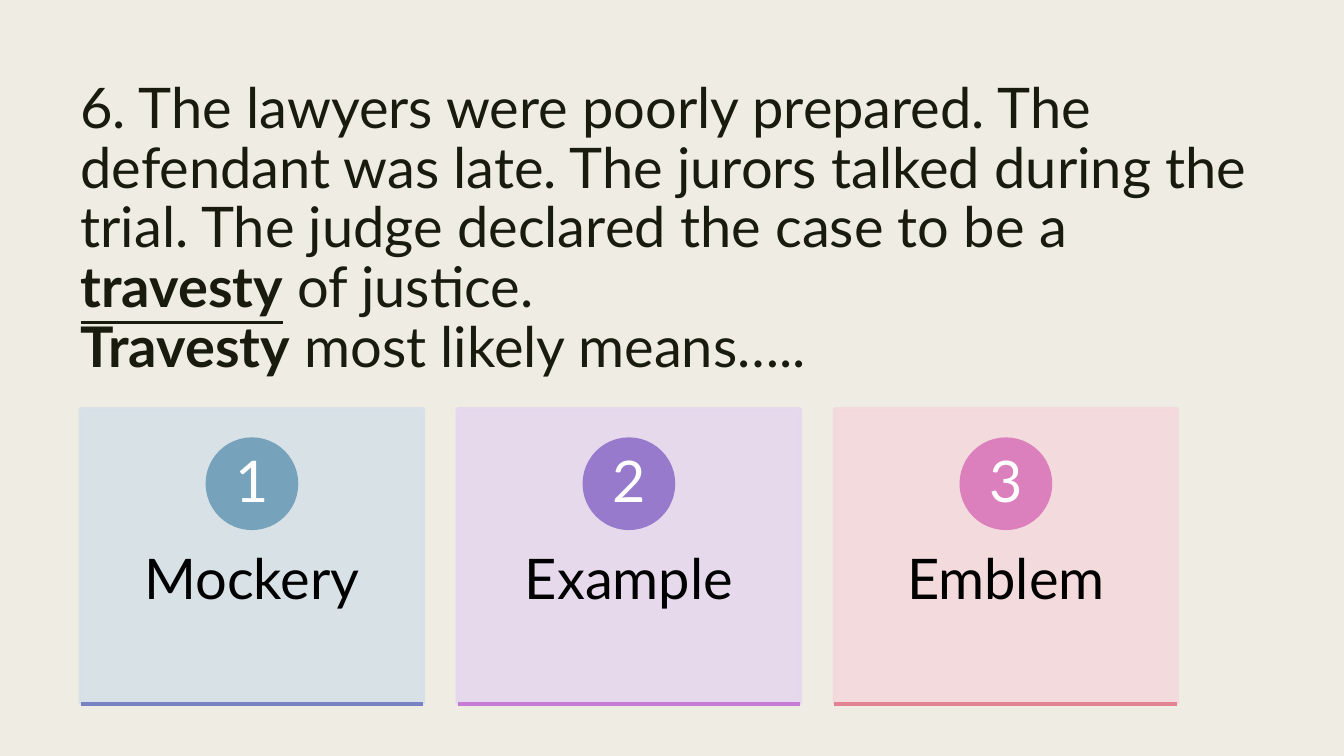
from dataclasses import dataclass

from lxml import etree
from pptx import Presentation
from pptx.dml.color import RGBColor
from pptx.enum.shapes import MSO_CONNECTOR, MSO_SHAPE
from pptx.enum.text import MSO_ANCHOR, PP_ALIGN
from pptx.oxml.ns import qn
from pptx.util import Cm, Pt

RECTANGLE, OVAL = MSO_SHAPE.RECTANGLE, MSO_SHAPE.OVAL
STRAIGHT = MSO_CONNECTOR.STRAIGHT
TOP, MIDDLE = MSO_ANCHOR.TOP, MSO_ANCHOR.MIDDLE
LEFT, CENTER = PP_ALIGN.LEFT, PP_ALIGN.CENTER

# Content: question runs as (text, bold, underlined)
QUESTION = [
    ("6. The lawyers were poorly prepared. The defendant was late. "
     "The jurors talked during the trial. "
     "The judge declared the case to be a ", False, False),
    ("travesty", True, True),
    (" of justice.\v", False, False),
    ("Travesty", True, False),
    (" most likely means…..", False, False),
]
# Answers: word, card colour, badge colour, base line colour
ANSWERS = [
    ("Mockery", "D6E0E7", "77A2BB", "7883C4"),
    ("Example", "E6D7EE", "977ACC", "C67CD4"),
    ("Emblem", "F4D9DC", "DB7FBD", "E28394"),
]


@dataclass(frozen=True)
class Theme:
    font: str = "Lato"
    background: str = "EFEDE3"
    question: str = "191B0E"
    answer: str = "000000"
    number: str = "FFFFFF"
    text_size: float = 40
    number_size: float = 41
    line_width: float = 2.75
    card_opacity: int = 90


THEME = Theme()

# Layout in centimetres
CARD_LEFT, CARD_TOP, CARD_WIDTH, CARD_HEIGHT = 2.03, 10.31, 8.64, 7.42
CARD_PITCH = 9.5
BADGE_SIZE, BADGE_DROP = 2.24, 0.76
NUMBER_SIZE = 1.58
LABEL_DROP, LABEL_HEIGHT = 2.82, 4.45


def color(value):
    return RGBColor.from_string(value)


def set_opacity(color_format_fill, percent):
    for element in color_format_fill.iter(qn("a:srgbClr")):
        etree.SubElement(element, qn("a:alpha"), val=str(percent * 1000))


def add_filled(slide, kind, box, fill):
    shape = slide.shapes.add_shape(kind, *map(Cm, box))
    shape.shadow.inherit = False
    shape.fill.solid()
    shape.fill.fore_color.rgb = color(fill)
    shape.line.color.rgb = color(fill)
    shape.line.width = Pt(THEME.line_width)
    return shape


def add_text(slide, box, runs, size, ink, align=CENTER, anchor=TOP,
             margins=(0.25, 0.13), spacing=0.9):
    frame = slide.shapes.add_textbox(*map(Cm, box)).text_frame
    frame.word_wrap = True
    frame.vertical_anchor = anchor
    frame.margin_left = frame.margin_right = Cm(margins[0])
    frame.margin_top = frame.margin_bottom = Cm(margins[1])
    paragraph = frame.paragraphs[0]
    paragraph.alignment = align
    paragraph.line_spacing = spacing
    paragraph.font.name = THEME.font
    paragraph.font.size = Pt(size)
    paragraph.font.color.rgb = color(ink)
    for text, bold, underlined in runs:
        before, line_break, after = text.partition("\v")
        run = paragraph.add_run()
        run.text = before
        run.font.bold = bold
        run.font.underline = underlined
        if line_break:
            paragraph.add_line_break()


def add_base_line(slide, left, top, width, ink):
    line = slide.shapes.add_connector(
        STRAIGHT, Cm(left), Cm(top), Cm(left + width), Cm(top))
    line.line.color.rgb = color(ink)
    line.line.width = Pt(THEME.line_width)
    etree.SubElement(line._element.spPr, qn("a:effectLst"))


def add_answer(slide, index, word, card_color, badge_color, base_color):
    left = CARD_LEFT + index * CARD_PITCH
    card = add_filled(slide, RECTANGLE,
                      (left, CARD_TOP, CARD_WIDTH, CARD_HEIGHT), card_color)
    set_opacity(card._element.spPr, THEME.card_opacity)
    add_text(slide, (left, CARD_TOP + LABEL_DROP, CARD_WIDTH, LABEL_HEIGHT),
             [(word, False, False)], THEME.text_size, THEME.answer,
             margins=(0.69, 0.91))

    # Numbered badge, centred across the card
    badge_left = left + (CARD_WIDTH - BADGE_SIZE) / 2
    badge_top = CARD_TOP + BADGE_DROP
    add_filled(slide, OVAL,
               (badge_left, badge_top, BADGE_SIZE, BADGE_SIZE), badge_color)
    inset = (BADGE_SIZE - NUMBER_SIZE) / 2
    add_text(slide, (badge_left + inset, badge_top + inset,
                     NUMBER_SIZE, NUMBER_SIZE),
             [(str(index + 1), False, False)], THEME.number_size,
             THEME.number, anchor=MIDDLE, margins=(0.18, 0.03))

    add_base_line(slide, left, CARD_TOP + CARD_HEIGHT, CARD_WIDTH, base_color)


def main():
    presentation = Presentation()
    presentation.slide_width, presentation.slide_height = Cm(33.87), Cm(19.05)
    slide = presentation.slides.add_slide(presentation.slide_layouts[6])
    slide.background.fill.solid()
    slide.background.fill.fore_color.rgb = color(THEME.background)

    # Question
    add_text(slide, (1.78, 1.9, 30.3, 4.11), QUESTION, THEME.text_size,
             THEME.question, align=LEFT, spacing=0.89)

    # Answer cards
    for index, answer in enumerate(ANSWERS):
        add_answer(slide, index, *answer)

    presentation.save("out.pptx")


if __name__ == "__main__":
    main()
